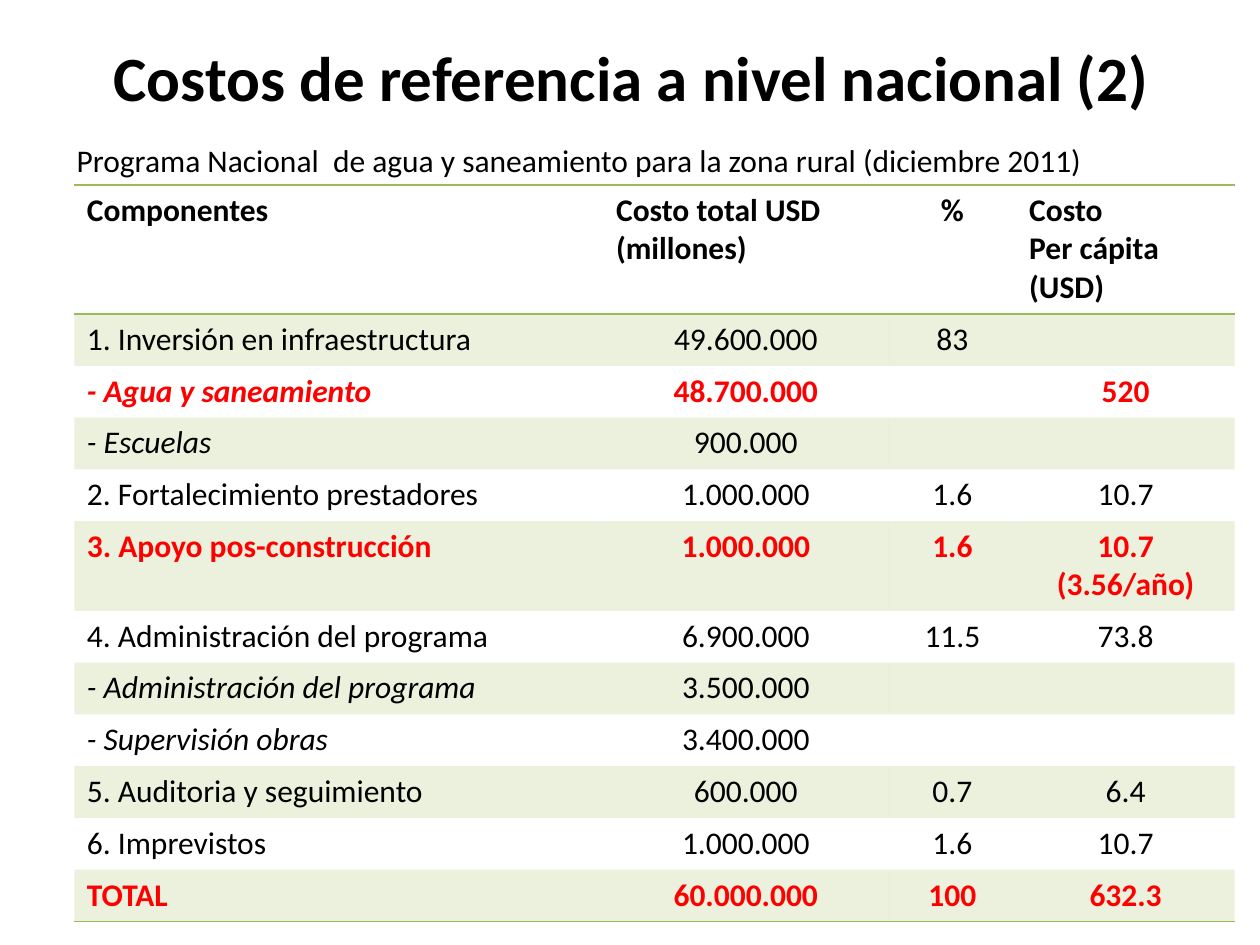
from lxml.etree import SubElement
from pptx import Presentation
from pptx.dml.color import RGBColor as RGB
from pptx.enum.text import MSO_ANCHOR as ANCHOR, MSO_AUTO_SIZE as AUTOSIZE, PP_ALIGN as ALIGN
from pptx.oxml import parse_xml
from pptx.oxml.ns import nsdecls, qn
from pptx.util import Pt

COLORS = {"text": "000000", "highlight": "FF0000", "green": "9BBB59"}
PLAIN_STYLE = "{2D5ABB26-0587-4C30-8999-92F81FD0307C}"

TITLE = "Costos de referencia a nivel nacional (2)"
SUBTITLE = "Programa Nacional  de agua y saneamiento para la zona rural (diciembre 2011)"
HEADER = ["Componentes", "Costo total USD\n(millones)", "%", "Costo\nPer cápita (USD)"]
COSTS = [
    ["1. Inversión en infraestructura", "49.600.000", "83", ""],
    ["- Agua y saneamiento", "48.700.000", "", "520"],
    ["- Escuelas", "900.000", "", ""],
    ["2. Fortalecimiento prestadores", "1.000.000", "1.6", "10.7"],
    ["3. Apoyo pos-construcción", "1.000.000", "1.6", "10.7 (3.56/año)"],
    ["4. Administración del programa", "6.900.000", "11.5", "73.8"],
    ["- Administración del programa", "3.500.000", "", ""],
    ["- Supervisión obras", "3.400.000", "", ""],
    ["5. Auditoria y seguimiento", "600.000", "0.7", "6.4"],
    ["6. Imprevistos", "1.000.000", "1.6", "10.7"],
    ["TOTAL", "60.000.000", "100", "632.3"],
]
HIGHLIGHTED = {"- Agua y saneamiento", "3. Apoyo pos-construcción", "TOTAL"}
COL_WIDTHS = [302.4, 162.7, 73.4, 124.6]
HEADER_HEIGHT, ROW_HEIGHT = 73.7, 29.6


def write(tf, text, size=18, color="text", bold=False, italic=False, align=ALIGN.LEFT):
    """Fill a text frame, one paragraph for each line of text."""
    for i, line in enumerate(text.split("\n")):
        p = tf.add_paragraph() if i else tf.paragraphs[0]
        p.alignment = align
        r = p.add_run()
        r.text = line
        font = r.font
        font.name, font.size, font.bold, font.italic = "Calibri", Pt(size), bold, italic
        font.color.rgb = RGB.from_string(COLORS[color])


def set_border(cell, side):
    """Draw a green line on the side 'T' or 'B'; call for 'B' before 'T'."""
    cell._tc.get_or_add_tcPr().insert(0, parse_xml(
        f'<a:ln{side} {nsdecls("a")} w="12700"><a:solidFill>'
        f'<a:srgbClr val="{COLORS["green"]}"/></a:solidFill></a:ln{side}>'))


def set_band(cell, shaded):
    if not shaded:
        cell.fill.background()
        return
    cell.fill.solid()
    cell.fill.fore_color.rgb = RGB.from_string(COLORS["green"])
    color = cell._tc.tcPr.find(".//" + qn("a:srgbClr"))
    SubElement(color, qn("a:alpha"), val="20000")


def add_title(slide):
    title = slide.shapes.title
    title.left, title.top, title.width, title.height = Pt(36.7), Pt(15.1), Pt(648), Pt(56.9)
    title.text_frame.vertical_anchor = ANCHOR.MIDDLE
    write(title.text_frame, TITLE, size=36, bold=True, align=ALIGN.CENTER)


def add_cost_table(slide):
    rows = [HEADER] + COSTS
    frame = slide.shapes.add_table(
        len(rows), len(HEADER), Pt(42.5), Pt(105.8), Pt(sum(COL_WIDTHS)),
        Pt(HEADER_HEIGHT + ROW_HEIGHT * len(COSTS)))
    table = frame.table
    table._tbl.tblPr.find(qn("a:tableStyleId")).text = PLAIN_STYLE
    for column, width in zip(table.columns, COL_WIDTHS):
        column.width = Pt(width)
    for i, values in enumerate(rows):
        is_header = i == 0
        marked = values[0] in HIGHLIGHTED
        table.rows[i].height = Pt(ROW_HEIGHT if i else HEADER_HEIGHT)
        for j, value in enumerate(values):
            cell = table.cell(i, j)
            set_band(cell, i % 2 == 1)
            if is_header or i == len(COSTS):
                set_border(cell, "B")
            if is_header:
                set_border(cell, "T")
            centered = j == 2 if is_header else j > 0
            if value:
                write(cell.text_frame, value, bold=is_header or marked,
                      color="highlight" if marked else "text",
                      italic=value.startswith("- "),
                      align=ALIGN.CENTER if centered else ALIGN.LEFT)


def add_subtitle(slide):
    tf = slide.shapes.add_textbox(Pt(36.7), Pt(77), Pt(612), Pt(29)).text_frame
    tf.word_wrap = True
    tf.auto_size = AUTOSIZE.SHAPE_TO_FIT_TEXT
    write(tf, SUBTITLE)


def main():
    prs = Presentation()
    prs.slide_width, prs.slide_height = Pt(720), Pt(540)
    slide = prs.slides.add_slide(prs.slide_layouts[5])
    add_title(slide)
    add_cost_table(slide)
    add_subtitle(slide)
    prs.save("out.pptx")


if __name__ == "__main__":
    main()
